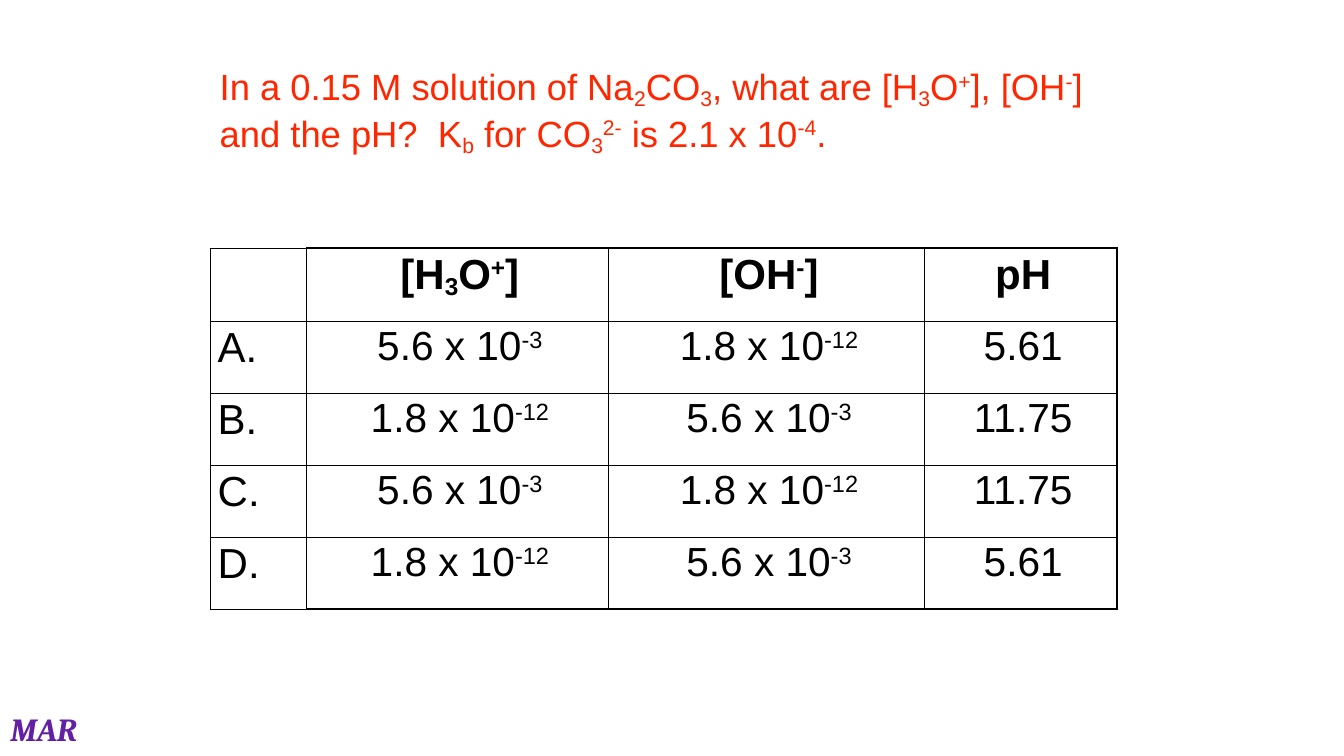
from lxml.etree import SubElement
from pptx import Presentation
from pptx.dml.color import RGBColor
from pptx.enum.text import MSO_ANCHOR, MSO_AUTO_SIZE, PP_ALIGN
from pptx.oxml.ns import qn
from pptx.util import Emu, Pt

PX = 9144
COLORS = {"question": "FF2600", "mark": "6420A4", "text": "000000", "border": "000000"}
BASELINES = {"_": "-16000", "^": "31000"}
QUESTION = ("In a 0.15 M solution of Na|_2|CO|_3|, what are [H|_3|O|^+|], [OH|^-|]"
            " and the pH?  K|_b| for CO|_3|^2-| is 2.1 x 10|^-4|.")
SMALL, LARGE = "1.8 x 10|^-12", "5.6 x 10|^-3"
ANSWERS = [
    ["", "[H|_3|O|^+|]", "[OH|^-|]", "pH"],
    ["A.", LARGE, SMALL, "5.61"],
    ["B.", SMALL, LARGE, "11.75"],
    ["C.", LARGE, SMALL, "11.75"],
    ["D.", SMALL, LARGE, "5.61"],
]
COL_WIDTHS = [191, 600, 627, 382]
ROW_HEIGHTS = [145] + [143] * 4


def px(n):
    return Emu(n * PX)


class SlideBuilder:
    def __init__(self, slide, font="Arial", indent=9):
        self.s = slide
        self.font = font
        self.indent = indent

    def add_text(self, tf, text, size, color, font=None, bold=False, italic=False,
                 align=PP_ALIGN.LEFT, before=0):
        p = tf.paragraphs[0]
        p.alignment = align
        p.space_before = Pt(before)
        pPr = p._p.get_or_add_pPr()
        pPr.set("marL", str(px(self.indent)))
        pPr.set("indent", "0")
        for part in filter(None, text.split("|")):
            r = p.add_run()
            r.text = part
            if part[0] in BASELINES:
                r.text = part[1:]
                r._r.get_or_add_rPr().set("baseline", BASELINES[part[0]])
            r.font.name = font or self.font
            r.font.size = Pt(size)
            r.font.bold = bold
            r.font.italic = italic
            r.font.color.rgb = RGBColor.from_string(COLORS[color])

    def place(self, sp, x, y, w, h, inset):
        sp.left, sp.top, sp.width, sp.height = px(x), px(y), px(w), px(h)
        tf = sp.text_frame
        tf.margin_left = tf.margin_right = tf.margin_top = tf.margin_bottom = px(inset)
        return tf

    def title(self, text, x, y, w, h):
        tf = self.place(self.s.shapes.title, x, y, w, h, 8)
        tf.auto_size = MSO_AUTO_SIZE.NONE
        tf.word_wrap = True
        tf.vertical_anchor = MSO_ANCHOR.MIDDLE
        self.add_text(tf, text, 52, "question")

    def label(self, text, x, y, w, h):
        tf = self.place(self.s.shapes.add_textbox(0, 0, 0, 0), x, y, w, h, 10)
        tf.word_wrap = False
        tf.auto_size = MSO_AUTO_SIZE.SHAPE_TO_FIT_TEXT
        self.add_text(tf, text, 46, "mark", "Cambria", True, True)

    def border(self, cell, side, width):
        ln = SubElement(cell._tc.get_or_add_tcPr(), qn("a:ln" + side), w=str(Pt(width)))
        fill = SubElement(ln, qn("a:solidFill"))
        SubElement(fill, qn("a:srgbClr"), val=COLORS["border"])

    def table(self, rows, x, y, widths, heights):
        frame = self.s.shapes.add_table(len(rows), len(widths), px(x), px(y),
                                        px(sum(widths)), px(sum(heights)))
        tbl = frame.table
        tbl.first_row = tbl.horz_banding = False
        for column, width in zip(tbl.columns, widths):
            column.width = px(width)
        for row, height in zip(tbl.rows, heights):
            row.height = px(height)
        last_row, last_col = len(rows) - 1, len(widths) - 1
        for i, row in enumerate(rows):
            for j, text in enumerate(row):
                cell = tbl.cell(i, j)
                thick = {"R": j == last_col, "T": i == 0 and j > 0,
                         "B": i == last_row and j > 0}
                for side in "LRTB":
                    self.border(cell, side, 3 if thick.get(side) else 1)
                cell.fill.background()
                cell.margin_left = cell.margin_right = px(6)
                cell.margin_top = cell.margin_bottom = px(6)
                cell.vertical_anchor = MSO_ANCHOR.TOP
                self.add_text(cell.text_frame, text, 60 if i == 0 or j == 0 else 58,
                              "text", bold=i == 0, before=12,
                              align=PP_ALIGN.CENTER if j else PP_ALIGN.LEFT)


def main():
    prs = Presentation()
    prs.slide_width, prs.slide_height = px(2667), px(1500)
    b = SlideBuilder(prs.slides.add_slide(prs.slide_layouts[5]))
    b.title(QUESTION, 419, 0, 1801, 440)
    b.label("MAR", 2, 1397, 176, 103)
    b.table(ANSWERS, 417, 492, COL_WIDTHS, ROW_HEIGHTS)
    prs.save("out.pptx")


if __name__ == "__main__":
    main()
